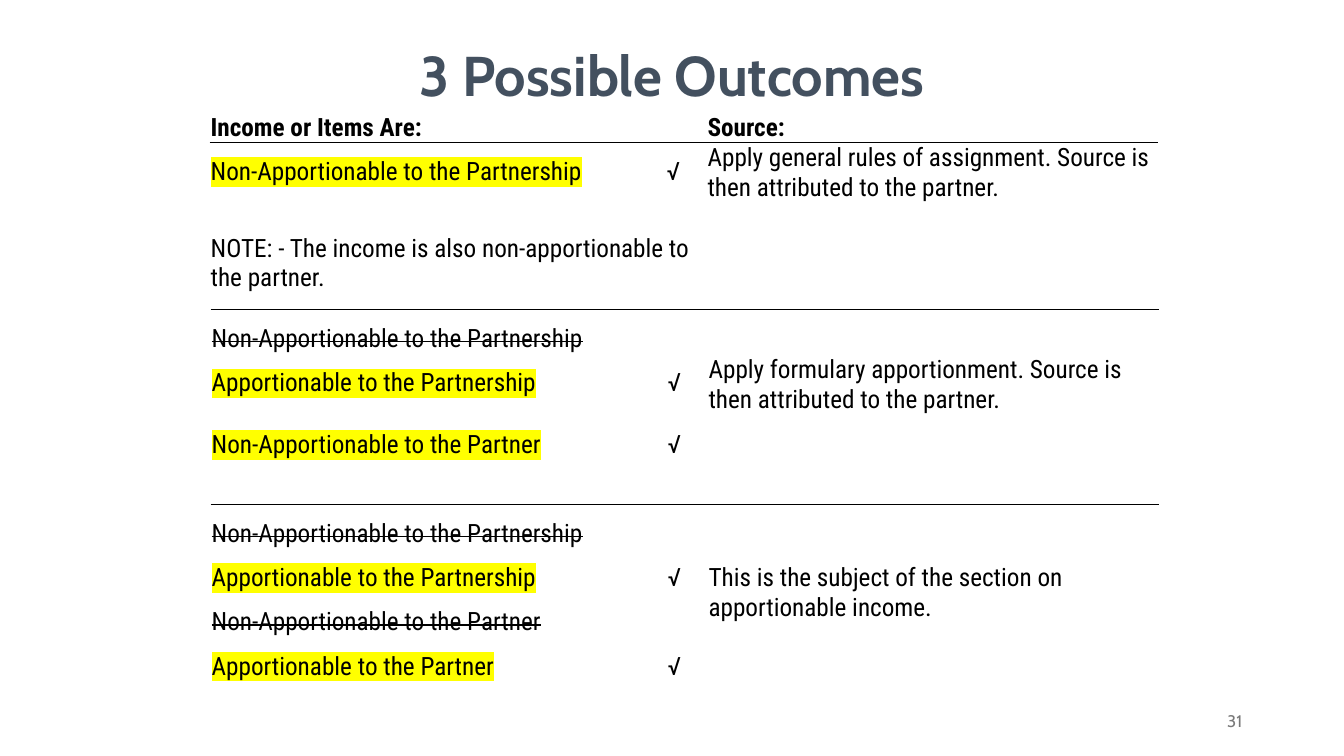
from lxml import etree
from pptx import Presentation
from pptx.dml.color import RGBColor
from pptx.enum.text import MSO_ANCHOR, PP_ALIGN
from pptx.oxml.ns import qn
from pptx.util import Inches, Pt

LEFT, CENTER, RIGHT = PP_ALIGN.LEFT, PP_ALIGN.CENTER, PP_ALIGN.RIGHT
TOP, MIDDLE, BOTTOM = MSO_ANCHOR.TOP, MSO_ANCHOR.MIDDLE, MSO_ANCHOR.BOTTOM

WIDTH, HEIGHT = Inches(13.33), Inches(7.5)
COLUMN, ROW = WIDTH / 40, HEIGHT / 30
TITLE_FONT, BODY_FONT = "Cabin", "Roboto Condensed"
BLACK, SLATE, GRAY, YELLOW = "000000", "43505F", "797979", "FFFF00"
NO_STYLE = "{2D5ABB26-0587-4C30-8999-92F81FD0307C}"
TABLE_COLUMNS = (12.81, 1.98, 13.44)
SINGLE, DOUBLE = 1.76, 2.4
RULE_WEIGHT = Pt(0.5)
CHECK = "√"

PLAIN = {}
BOLD = {"bold": True}
CHOSEN = {"highlight": YELLOW}
REJECTED = {"strike": True}

FIRST_OUTCOME = [
    ("Income or Items Are:", BOLD, "", SINGLE),
    ("Non-Apportionable to the Partnership", CHOSEN, CHECK, SINGLE),
    ("", PLAIN, "", SINGLE),
    ("NOTE: - The income is also non-apportionable to the partner.", PLAIN, "", DOUBLE),
    ("", PLAIN, "", SINGLE),
]
OTHER_OUTCOMES = [
    ("Non-Apportionable to the Partnership", REJECTED, "", SINGLE),
    ("Apportionable to the Partnership", CHOSEN, CHECK, SINGLE),
    ("Non-Apportionable to the Partner", CHOSEN, CHECK, DOUBLE),
    ("", PLAIN, "", SINGLE),
    ("Non-Apportionable to the Partnership", REJECTED, "", SINGLE),
    ("Apportionable to the Partnership", CHOSEN, CHECK, SINGLE),
    ("Non-Apportionable to the Partner", REJECTED, "", SINGLE),
    ("Apportionable to the Partner", CHOSEN, CHECK, SINGLE),
]


def color(value):
    return RGBColor.from_string(value)


def across(count):
    return round(count * COLUMN)


def down(count):
    return round(count * ROW)


def write(frame, text, size=18, font=BODY_FONT, fill=BLACK, bold=False,
          align=LEFT, spacing=None, highlight=None, strike=False):
    para = frame.paragraphs[0]
    para.alignment = align
    if spacing:
        para.line_spacing = spacing
    span = para.add_run()
    span.text = text
    span.font.size = Pt(size)
    span.font.bold = bold
    span.font.color.rgb = color(fill)
    span.font.name = font
    properties = span.font._element
    if strike:
        properties.set("strike", "sngStrike")
    if highlight:
        mark = etree.Element(qn("a:highlight"))
        etree.SubElement(mark, qn("a:srgbClr"), val=highlight)
        properties.find(qn("a:solidFill")).addnext(mark)


def add_text(page, text, left, top, width, height, **style):
    box = page.shapes.add_textbox(across(left), down(top), across(width), down(height))
    frame = box.text_frame
    frame.word_wrap = True
    frame.vertical_anchor = MIDDLE
    write(frame, text, **style)


def fill_cell(cell, text, anchor=BOTTOM, **style):
    cell.vertical_anchor = anchor
    if text:
        write(cell.text_frame, text, **style)


def add_outcomes(page, left, top, entries):
    heights = [entry[3] for entry in entries]
    frame = page.shapes.add_table(len(entries), len(TABLE_COLUMNS), across(left), down(top),
                                  across(sum(TABLE_COLUMNS)), down(sum(heights)))
    table = frame.table
    table.first_row = table.horz_banding = False
    table._tbl.tblPr.find(qn("a:tableStyleId")).text = NO_STYLE
    for column, width in zip(table.columns, TABLE_COLUMNS):
        column.width = across(width)
    for row, height in zip(table.rows, heights):
        row.height = down(height)
    for cell in table.iter_cells():
        cell.fill.background()
        cell.margin_left = cell.margin_right = cell.margin_top = Inches(0.01)
        cell.margin_bottom = 0
    for index, (item, style, mark, _) in enumerate(entries):
        fill_cell(table.cell(index, 0), item, **style)
        fill_cell(table.cell(index, 1), mark, align=CENTER)
    return table


def add_source(table, first, last, text, anchor=MIDDLE):
    table.cell(first, 2).merge(table.cell(last, 2))
    fill_cell(table.cell(first, 2), text, anchor)


def add_edge(cell, side, ruled):
    edge = etree.Element(qn(f"a:ln{side}"), w=str(RULE_WEIGHT))
    if ruled:
        fill = etree.SubElement(edge, qn("a:solidFill"))
        etree.SubElement(fill, qn("a:srgbClr"), val=BLACK)
    else:
        etree.SubElement(edge, qn("a:noFill"))
    cell._tc.get_or_add_tcPr().insert(0, edge)


def rule_above(table, ruled_rows):
    for row in range(len(table.rows)):
        for column in range(len(TABLE_COLUMNS)):
            cell = table.cell(row, column)
            add_edge(cell, "B", row + 1 in ruled_rows)
            add_edge(cell, "T", row in ruled_rows)
            add_edge(cell, "R", False)
            add_edge(cell, "L", False)


def main():
    deck = Presentation()
    deck.slide_width, deck.slide_height = WIDTH, HEIGHT
    page = deck.slides.add_slide(deck.slide_layouts[6])

    add_text(page, "3 Possible Outcomes", 0, 1.57, 40, 3.08, size=40, font=TITLE_FONT,
             fill=SLATE, bold=True, align=CENTER, spacing=0.9)

    first = add_outcomes(page, 6.24, 3.9, FIRST_OUTCOME)
    fill_cell(first.cell(0, 2), "Source:", **BOLD)
    first.cell(3, 0).merge(first.cell(3, 1))
    add_source(first, 1, 4, "Apply general rules of assignment. "
               "Source is then attributed to the partner.", TOP)
    rule_above(first, {1})

    others = add_outcomes(page, 6.27, 12.28, OTHER_OUTCOMES)
    add_source(others, 0, 2, "Apply formulary apportionment. "
               "Source is then attributed to the partner.")
    add_source(others, 4, 7, "This is the subject of the section on apportionable income.")
    rule_above(others, {0, 4})

    add_text(page, "31", 28.27, 27.8, 9, 1.6, size=12, font=TITLE_FONT,
             fill=GRAY, align=RIGHT)
    deck.save("out.pptx")


if __name__ == "__main__":
    main()
